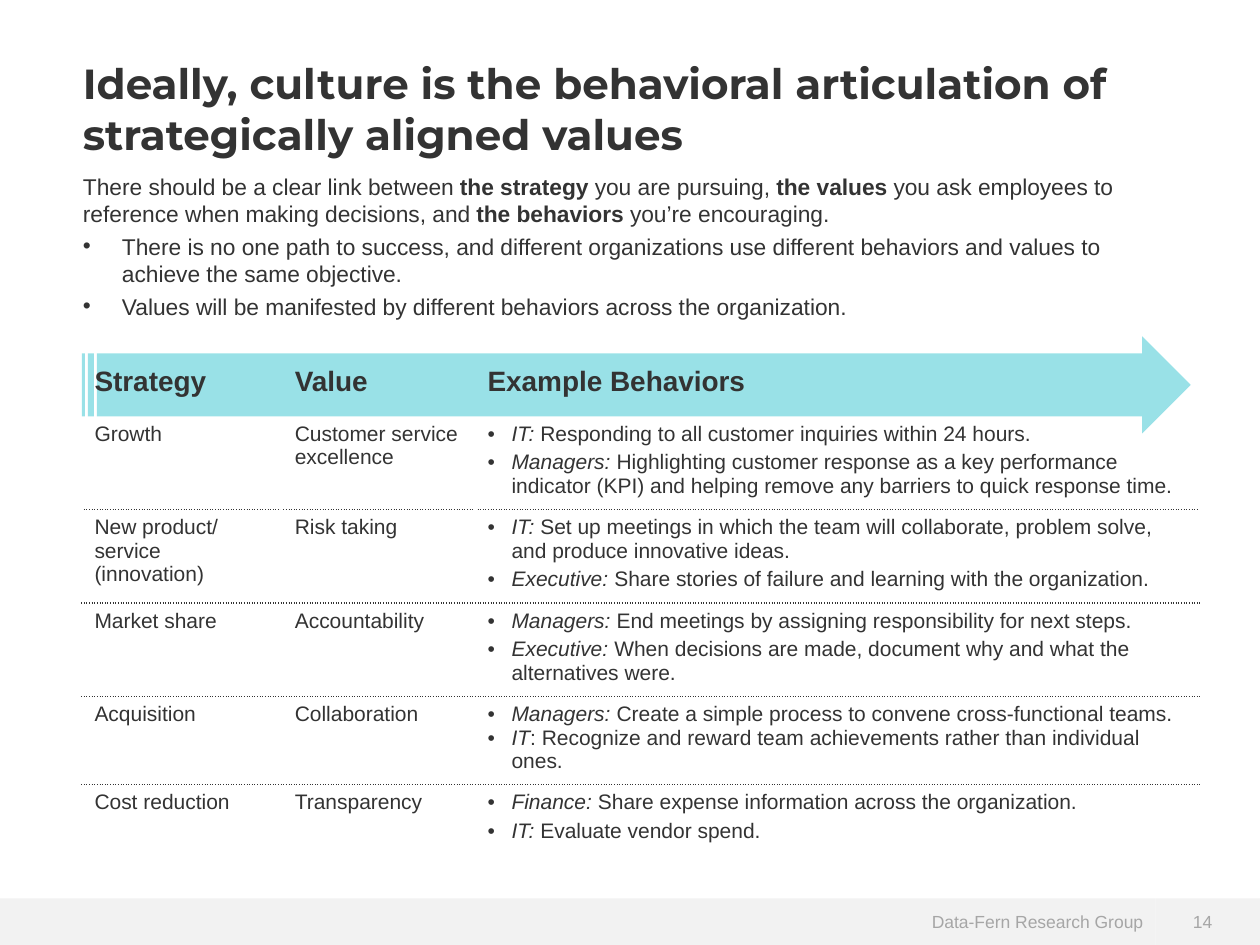
from lxml.etree import SubElement
from pptx import Presentation
from pptx.dml.color import RGBColor
from pptx.enum.shapes import MSO_SHAPE
from pptx.enum.text import MSO_ANCHOR, PP_ALIGN
from pptx.oxml.ns import qn
from pptx.util import Inches, Pt

INK = RGBColor(0x33, 0x33, 0x33)
TEAL = RGBColor(0x34, 0xC5, 0xD0)
BAND = RGBColor(0xF2, 0xF2, 0xF2)
GREY = RGBColor(0xA6, 0xA6, 0xA6)
WHITE = RGBColor(0xFF, 0xFF, 0xFF)
PLAIN_TABLE = "{2D5ABB26-0587-4C30-8999-92F81FD0307C}"

TITLE = "Ideally, culture is the behavioral articulation of strategically aligned values"
INTRO = [
    ("There should be a clear link between ", False),
    ("the strategy", True),
    (" you are pursuing, ", False),
    ("the values ", True),
    ("you ask employees to reference when making decisions, and ", False),
    ("the behaviors ", True),
    ("you’re encouraging.", False),
]
POINTS = [
    ("There is no one path to success, and different organizations use different "
     "behaviors and values to achieve the same objective.", 3),
    ("Values will be manifested by different behaviors across the organization.", 4),
]
HEADINGS = ["Strategy", "Value", "Example Behaviors"]
ROWS = [
    (["Growth"], "Customer service excellence", 3, [
        ("IT: ", "Responding to all customer inquiries within 24 hours."),
        ("Managers: ", "Highlighting customer response as a key performance indicator "
         "(KPI) and helping remove any barriers to quick response time.")]),
    (["New product/ service", "(innovation)"], "Risk taking", 3, [
        ("IT: ", "Set up meetings in which the team will collaborate, problem solve, "
         "and produce innovative ideas."),
        ("Executive: ", "Share stories of failure and learning with the organization.")]),
    (["Market share"], "Accountability", 3, [
        ("Managers:", " End meetings by assigning responsibility for next steps."),
        ("Executive: ", "When decisions are made, document why and what the "
         "alternatives were.")]),
    (["Acquisition"], "Collaboration", 0, [
        ("Managers: ", "Create a simple process to convene cross-functional teams."),
        ("IT", ": Recognize and reward team achievements rather than individual ones.")]),
    (["Cost reduction"], "Transparency", 3, [
        ("Finance: ", "Share expense information across the organization."),
        ("IT: ", "Evaluate vendor spend.")]),
]
COLUMN_WIDTHS = [1.59, 1.53, 5.75]
ROW_HEIGHTS = [0.44, 0.74, 0.74, 0.74, 0.7, 0.54]


class SlideBuilder:
    font = "Arial"

    def __init__(self, page):
        self.page = page

    def span(self, para, text, size, color=INK, bold=False, italic=False, font=None):
        span = para.add_run()
        span.text = text
        span.font.name = font or self.font
        span.font.size = Pt(size)
        span.font.color.rgb = color
        span.font.bold = bold
        span.font.italic = italic

    def para(self, frame, first=False, after=0, indent=0):
        para = frame.paragraphs[0] if first else frame.add_paragraph()
        para.space_after = Pt(after)
        if indent:
            props = para._p.get_or_add_pPr()
            props.set("marL", str(Inches(indent)))
            props.set("indent", str(-Inches(indent)))
            SubElement(props, qn("a:buFont")).set("typeface", self.font)
            SubElement(props, qn("a:buChar")).set("char", "•")
        return para

    def text_box(self, left, top, width, height):
        box = self.page.shapes.add_textbox(
            Inches(left), Inches(top), Inches(width), Inches(height))
        box.text_frame.word_wrap = True
        return box.text_frame

    def shape(self, kind, left, top, width, height, color):
        shape = self.page.shapes.add_shape(
            kind, Inches(left), Inches(top), Inches(width), Inches(height))
        shape.shadow.inherit = False
        shape.fill.solid()
        shape.fill.fore_color.rgb = color
        shape.line.fill.background()
        return shape

    def footer(self, left, width, text, align, indent=0):
        band = self.shape(MSO_SHAPE.RECTANGLE, left, 7.13, width, 0.37, BAND)
        band.text_frame.vertical_anchor = MSO_ANCHOR.MIDDLE
        para = self.para(band.text_frame, first=True)
        para.alignment = align
        para._p.get_or_add_pPr().set("marL", str(Inches(indent)))
        self.span(para, text, 10, GREY)

    def arrow(self, left, top, width, height):
        arrow = self.shape(
            MSO_SHAPE.STRIPED_RIGHT_ARROW, left, top, width, height, TEAL)
        arrow.adjustments[0] = 0.651
        arrow.adjustments[1] = 0.5
        color = arrow._element.spPr.find(qn("a:solidFill"))[0]
        SubElement(color, qn("a:alpha")).set("val", "50000")

    def table(self, left, top, widths, heights):
        frame = self.page.shapes.add_table(
            len(heights), len(widths), Inches(left), Inches(top),
            Inches(sum(widths)), Inches(sum(heights)))
        table = frame.table
        table.first_row = False
        table.horz_banding = False
        table._tbl.tblPr.find(qn("a:tableStyleId")).text = PLAIN_TABLE
        for column, width in zip(table.columns, widths):
            column.width = Inches(width)
        for row, height in zip(table.rows, heights):
            row.height = Inches(height)
        for cell in table.iter_cells():
            cell.fill.background()
        return table

    def borders(self, cell, edges):
        props = cell._tc.get_or_add_tcPr()
        for position, (edge, color, dash) in enumerate(edges):
            line = SubElement(props, qn(f"a:ln{edge}"))
            line.set("w", str(Pt(1)))
            fill = SubElement(line, qn("a:solidFill"))
            SubElement(fill, qn("a:srgbClr")).set("val", str(color))
            SubElement(line, qn("a:prstDash")).set("val", dash)
            props.insert(position, line)


def fill_table(builder):
    table = builder.table(0.65, 2.86, COLUMN_WIDTHS, ROW_HEIGHTS)
    for column, heading in enumerate(HEADINGS):
        para = builder.para(table.cell(0, column).text_frame, first=True)
        builder.span(para, heading, 16, bold=True)

    dotted_bottom = ("B", INK, "sysDot")
    sides = [("L", WHITE, "solid"), ("R", WHITE, "solid"), ("T", INK, "sysDot")]
    for number, (strategy, value, after, behaviors) in enumerate(ROWS, 1):
        cells = [table.cell(number, column) for column in range(len(HEADINGS))]
        for cell, lines in zip(cells, (strategy, [value])):
            for index, line in enumerate(lines):
                builder.span(builder.para(cell.text_frame, index == 0), line, 12)
        for index, (who, action) in enumerate(behaviors):
            para = builder.para(cells[2].text_frame, index == 0, after, 0.19)
            builder.span(para, who, 12, italic=True)
            builder.span(para, action, 12)
        bottom = ("B", WHITE, "solid") if number == len(ROWS) else dotted_bottom
        edges = [bottom] if number == 1 else sides + [bottom]
        for cell in cells:
            builder.borders(cell, edges)


def main():
    deck = Presentation()
    deck.slide_width = Inches(10)
    deck.slide_height = Inches(7.5)
    builder = SlideBuilder(deck.slides.add_slide(deck.slide_layouts[6]))

    builder.footer(0, 9.17, "Data-Fern Research Group", PP_ALIGN.RIGHT)
    builder.footer(9.17, 0.83, "14", PP_ALIGN.LEFT, 0.2)
    builder.arrow(0.65, 2.67, 8.8, 0.77)

    title = builder.text_box(0.56, 0.41, 8.89, 0.94)
    builder.span(builder.para(title, first=True), TITLE, 24, bold=True, font="Montserrat")

    body = builder.text_box(0.56, 1.32, 8.89, 1.29)
    intro = builder.para(body, first=True, after=3)
    for text, bold in INTRO:
        builder.span(intro, text, 13, bold=bold)
    for text, after in POINTS:
        builder.span(builder.para(body, after=after, indent=0.31), text, 13)

    fill_table(builder)
    deck.save("out.pptx")


if __name__ == "__main__":
    main()
